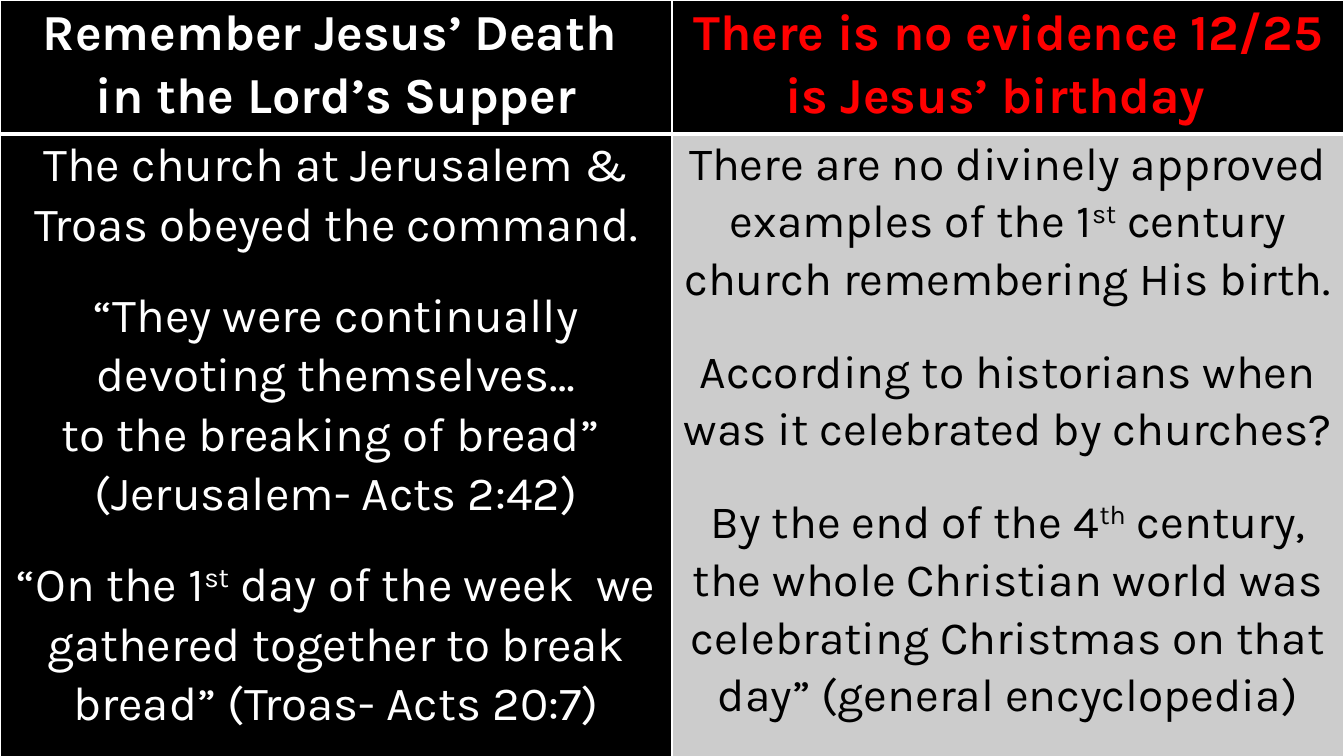
from lxml.etree import SubElement
from pptx import Presentation
from pptx.dml.color import RGBColor
from pptx.enum.text import MSO_ANCHOR as Anchor, PP_ALIGN as Align
from pptx.oxml.ns import qn
from pptx.util import Pt

BLACK = RGBColor(0x00, 0x00, 0x00)
WHITE = RGBColor(0xFF, 0xFF, 0xFF)
RED = RGBColor(0xFF, 0x00, 0x00)
GREY = RGBColor(0xCC, 0xCC, 0xCC)

WIDTH, HEIGHT = 1344, 756
HEADER_ROW, BODY_ROW = 134, 672
THIN, THICK = 1, 3


def px(length):
    return round(length * 914400 / 100.8)


class ComparisonSlide:
    font = "Karla"
    line_spacing = 1.07
    side_margin = 7

    def __init__(self, deck):
        self.page = deck.slides.add_slide(deck.slide_layouts[6])

    def background(self, color):
        fill = self.page.background.fill
        fill.solid()
        fill.fore_color.rgb = color

    def table(self, columns, rows):
        frame = self.page.shapes.add_table(
            len(rows), len(columns), 0, 0, px(sum(columns)), px(sum(rows)))
        grid = frame.table
        grid.first_row = grid.horz_banding = False
        for column, width in zip(grid.columns, columns):
            column.width = px(width)
        for row, height in zip(grid.rows, rows):
            row.height = px(height)
        return grid

    def borders(self, cell, top, bottom):
        properties = cell._tc.get_or_add_tcPr()
        for side, points in (("L", THIN), ("R", THIN), ("T", top), ("B", bottom)):
            line = SubElement(properties, qn(f"a:ln{side}"), w=str(Pt(points)))
            solid = SubElement(line, qn("a:solidFill"))
            SubElement(solid, qn("a:srgbClr"), val=str(WHITE))

    def cell(self, cell, fill, top, bottom):
        self.borders(cell, top, bottom)
        cell.fill.solid()
        cell.fill.fore_color.rgb = fill
        cell.margin_left = cell.margin_right = px(self.side_margin)
        cell.margin_top = cell.margin_bottom = 0
        cell.vertical_anchor = Anchor.TOP

    def text(self, cell, paragraphs, size, color, bold=False):
        frame = cell.text_frame
        for index, (gap, pieces) in enumerate(paragraphs):
            para = frame.add_paragraph() if index else frame.paragraphs[0]
            para.alignment = Align.CENTER
            para.line_spacing = self.line_spacing
            para.space_before = Pt(gap)
            for position, piece in enumerate(pieces):
                self.span(para, piece, size, color, bold, raised=position == 1)

    def span(self, para, words, size, color, bold, raised):
        span = para.add_run()
        span.text = words
        span.font.name = self.font
        span.font.size = Pt(size)
        span.font.bold = bold
        span.font.color.rgb = color
        if raised:
            span.font._element.set("baseline", "30000")


SUPPER_TITLE = [
    (0, ["Remember Jesus’ Death "]),
    (0, ["in the Lord’s Supper"]),
]
BIRTHDAY_TITLE = [
    (0, ["There is no evidence 12/25 is Jesus’ birthday  "]),
]
SUPPER_BODY = [
    (0, ["The church at Jerusalem & Troas obeyed the command."]),
    (22.5, ["“They were continually devoting themselves…"]),
    (0, ["to the breaking of bread” "]),
    (0, ["(Jerusalem- Acts 2:42)"]),
    (22.5, ["“On the 1", "st",
            " day of the week  we gathered together to break bread” (Troas- Acts 20:7)"]),
]
BIRTHDAY_BODY = [
    (0, ["There are no divinely approved examples of the 1", "st",
         " century church remembering His birth."]),
    (25, ["According to historians when was it celebrated by churches?"]),
    (25, ["By the end of the 4", "th",
          " century, the whole Christian world was celebrating Christmas on that day”"
          " (general encyclopedia)"]),
]


def main():
    deck = Presentation()
    deck.slide_width, deck.slide_height = px(WIDTH), px(HEIGHT)
    slide = ComparisonSlide(deck)
    slide.background(BLACK)
    grid = slide.table([WIDTH // 2] * 2, [HEADER_ROW, BODY_ROW])

    titles = [(SUPPER_TITLE, WHITE), (BIRTHDAY_TITLE, RED)]
    for column, (paragraphs, color) in enumerate(titles):
        header = grid.cell(0, column)
        slide.cell(header, BLACK, THIN, THICK)
        slide.text(header, paragraphs, 36, color, bold=True)

    bodies = [(SUPPER_BODY, 34, WHITE, BLACK), (BIRTHDAY_BODY, 33, BLACK, GREY)]
    for column, (paragraphs, size, color, fill) in enumerate(bodies):
        body = grid.cell(1, column)
        slide.cell(body, fill, THICK, THIN)
        slide.text(body, paragraphs, size, color)

    deck.save("out.pptx")


if __name__ == "__main__":
    main()
